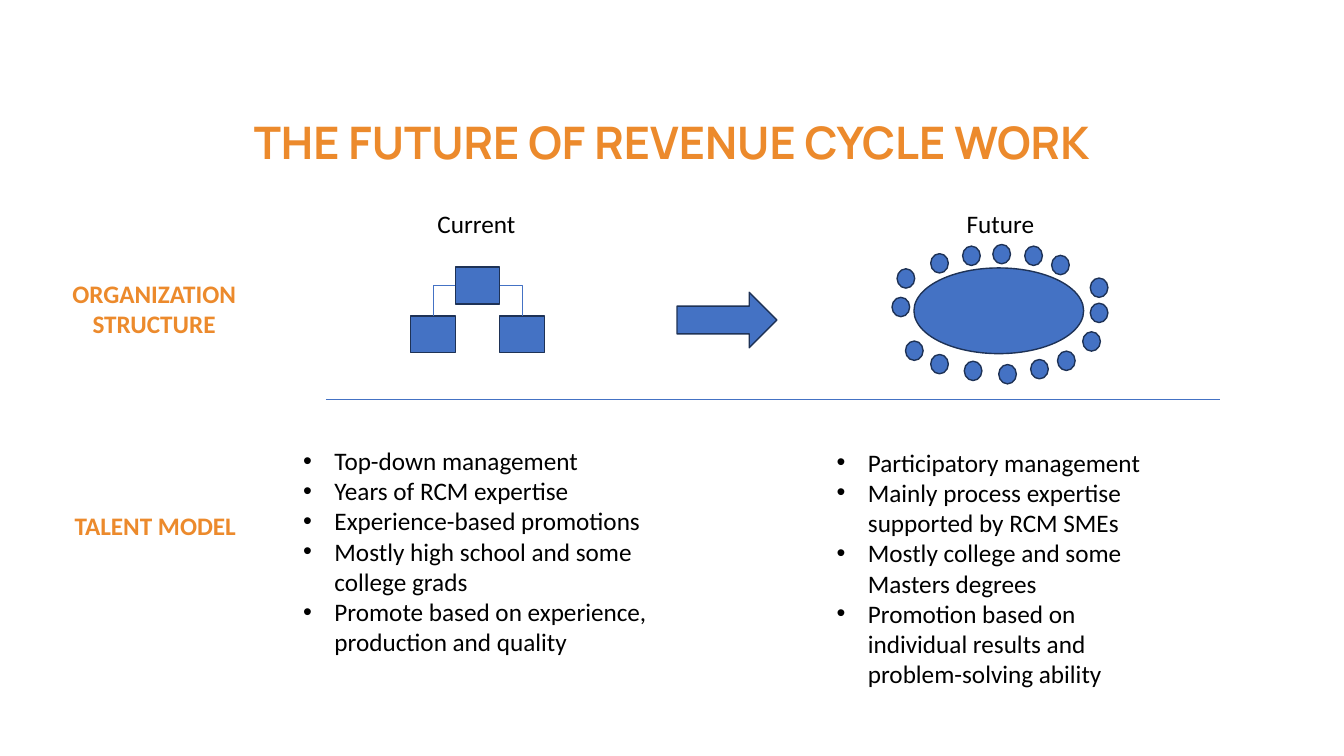
from dataclasses import dataclass

from pptx import Presentation, util as u
from pptx.dml import color
from pptx.enum import shapes, text
from pptx.oxml import ns, xmlchemy


@dataclass(frozen=True)
class Theme:
    accent: str = "EC8A2C"
    ink: str = "000000"
    fill: str = "4472C4"
    outline: str = "1E3256"
    heading_face: str = "Manrope"
    body_face: str = "Calibri"
    heading_size: int = 32
    body_size: int = 18
    outline_width: float = 1
    rule_width: float = 0.5
    bullet_indent: float = 0.31


class SlideBuilder:
    """Places elements on a grid of 80 columns by 45 rows."""

    COLUMNS, ROWS = 80, 45

    def __init__(self, deck, layout_index, theme):
        self.theme = theme
        self.cell_w = deck.slide_width / self.COLUMNS
        self.cell_h = deck.slide_height / self.ROWS
        self.slide = deck.slides.add_slide(deck.slide_layouts[layout_index])

    def grid(self, *cells):
        """Turn alternating columns and rows into lengths."""
        return [int(n * (self.cell_h if i % 2 else self.cell_w)) for i, n in enumerate(cells)]

    def apply(self, target, values):
        for name, value in values.items():
            setattr(target, name, value)

    def place(self, placeholder, cells):
        self.apply(placeholder, dict(zip(("left", "top", "width", "height"), self.grid(*cells))))

    def fill_text(self, frame, lines, ink, bold=False, face=None, size=None, **paragraph_format):
        frame.auto_size = text.MSO_AUTO_SIZE.NONE
        for i, line in enumerate(lines):
            paragraph = frame.paragraphs[0] if i == 0 else frame.add_paragraph()
            run = paragraph.add_run()
            run.text = line
            self.apply(paragraph, paragraph_format)
            self.apply(run.font, {
                "name": face or self.theme.body_face,
                "size": u.Pt(size or self.theme.body_size),
                "bold": bold,
            })
            run.font.color.rgb = color.RGBColor.from_string(ink)

    def title(self, wording, cells):
        heading = self.slide.shapes.title
        self.place(heading, cells)
        heading.text_frame.vertical_anchor = text.MSO_ANCHOR.MIDDLE
        self.fill_text(heading.text_frame, [wording], self.theme.accent, bold=True,
                       face=self.theme.heading_face, size=self.theme.heading_size,
                       alignment=text.PP_ALIGN.CENTER, line_spacing=0.9)

    def bullets(self, index, items, cells):
        body = self.slide.placeholders[index]
        self.place(body, cells)
        self.fill_text(body.text_frame, items, self.theme.ink, space_before=u.Pt(0))
        indent = u.Inches(self.theme.bullet_indent)
        for paragraph in body.text_frame.paragraphs:
            properties = paragraph._p.get_or_add_pPr()
            properties.set("marL", str(indent))
            properties.set("indent", str(-indent))

    def label(self, lines, cells, ink, bold=False, alignment=text.PP_ALIGN.LEFT):
        box = self.slide.shapes.add_textbox(*self.grid(*cells))
        box.text_frame.word_wrap = False
        self.fill_text(box.text_frame, lines, ink, bold, alignment=alignment)

    def shape(self, preset, cells):
        item = self.slide.shapes.add_shape(preset, *self.grid(*cells))
        item.shadow.inherit = False
        item.fill.solid()
        item.fill.fore_color.rgb = color.RGBColor.from_string(self.theme.fill)
        item.line.color.rgb = color.RGBColor.from_string(self.theme.outline)
        item.line.width = u.Pt(self.theme.outline_width)
        return item

    def connector(self, kind, cells=(0, 0, 1, 1)):
        link = self.slide.shapes.add_connector(kind, *self.grid(*cells))
        link.line.color.rgb = color.RGBColor.from_string(self.theme.fill)
        link.line.width = u.Pt(self.theme.rule_width)
        link._element.spPr.append(xmlchemy.OxmlElement("a:effectLst"))
        return link

    def elbow(self, start, start_site, end, end_site):
        link = self.connector(shapes.MSO_CONNECTOR.ELBOW)
        link.begin_connect(start, start_site)
        link.end_connect(end, end_site)
        link._element.spPr.find(ns.qn("a:prstGeom")).set("prst", "bentConnector2")


TITLE = "THE FUTURE OF REVENUE CYCLE WORK"
CURRENT_TALENT = [
    "Top-down management",
    "Years of RCM expertise",
    "Experience-based promotions",
    "Mostly high school and some college grads",
    "Promote based on experience, production and quality",
]
FUTURE_TALENT = [
    "Participatory management",
    "Mainly process expertise supported by RCM SMEs",
    "Mostly college and some Masters degrees",
    "Promotion based on individual results and problem-solving ability",
]
# Top-left corners of the team members, clockwise from the left
MEMBERS = [
    (53.1, 17.7), (53.4, 16), (55.4, 15.1), (57.3, 14.65), (59.1, 14.55), (61, 14.65),
    (62.6, 15.2), (64.9, 16.55), (64.9, 18.05), (64.45, 19.75), (62.95, 20.9),
    (61.35, 21.4), (59.45, 21.7), (57.4, 21.5), (55.4, 21.1), (53.9, 20.3),
]


def main():
    deck = Presentation()
    deck.slide_width, deck.slide_height = u.Inches(13.33), u.Inches(7.5)
    theme = Theme()
    page = SlideBuilder(deck, 3, theme)
    preset = shapes.MSO_SHAPE

    page.title(TITLE, (5.5, 5.65, 69, 6))

    # Current structure: one manager above two reports
    box_w, box_h = 2.65, 2.2
    manager_x = 27.1
    manager = page.shape(preset.RECTANGLE, (manager_x, 15.9, box_w, box_h))
    for step, manager_side in ((1, 3), (-1, 1)):
        report = page.shape(preset.RECTANGLE, (manager_x + step * box_w, 18.8, box_w, box_h))
        page.elbow(manager, manager_side, report, 0)

    # Future structure: a shared core ringed by team members
    page.shape(preset.OVAL, (54.4, 15.95, 10.1, 5.1))
    for member in MEMBERS:
        page.shape(preset.OVAL, (*member, 1.05, 1.15))

    # Column and row headings
    page.label(["Current"], (25.45, 12.1, 5.9, 2.4), theme.ink)
    page.label(["Future"], (56.95, 12.1, 5.3, 2.4), theme.ink)
    page.label(["ORGANIZATION", "STRUCTURE"], (3.65, 16.25, 11.05, 4.25),
               theme.accent, bold=True, alignment=text.PP_ALIGN.CENTER)
    page.label(["TALENT MODEL"], (3.85, 30.1, 10.9, 2.4), theme.accent, bold=True)

    # Divider and talent lists
    page.connector(shapes.MSO_CONNECTOR.STRAIGHT, (19.4, 23.75, 72.6, 23.75))
    page.bullets(1, CURRENT_TALENT, (17.45, 26.2, 21.9, 13.3))
    page.bullets(2, FUTURE_TALENT, (49.2, 26.3, 21.05, 15.1))

    # Shift from current to future
    page.shape(preset.RIGHT_ARROW, (40.3, 17.4, 5.95, 3.3))

    deck.save("out.pptx")


if __name__ == "__main__":
    main()
